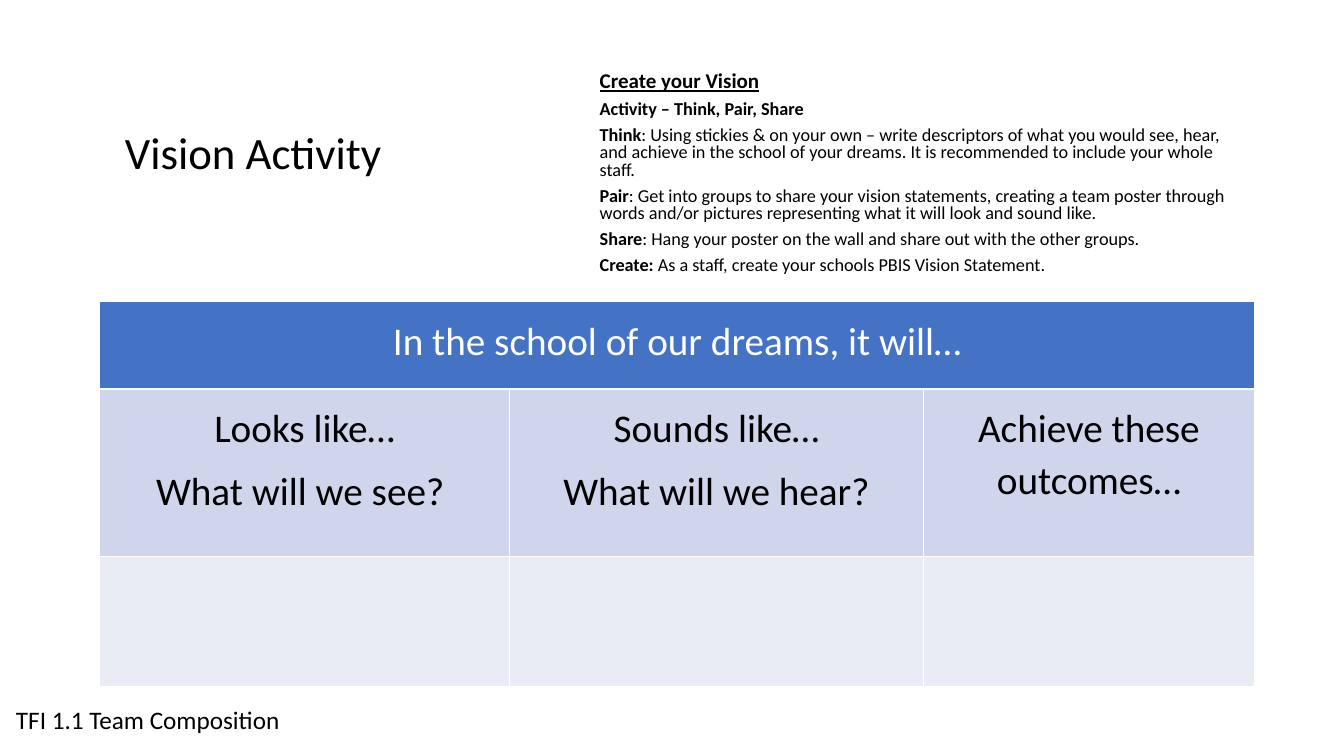
from pptx import Presentation
from pptx.dml.color import RGBColor
from pptx.enum.text import MSO_ANCHOR as Anchor, PP_ALIGN as Align
from pptx.util import Inches, Pt

FONT = "Calibri"
COLORS = {
    "text": "000000",
    "header_text": "FFFFFF",
    "header": "4472C4",
    "prompt": "CFD5EA",
    "answer": "E9EBF5",
}
INSTRUCTIONS = [
    ("Activity – Think, Pair, Share", ""),
    ("Think", ": Using stickies & on your own – write descriptors of what you would see, "
     "hear, and achieve in the school of your dreams. It is recommended to include your "
     "whole staff."),
    ("Pair", ": Get into groups to share your vision statements, creating a team poster "
     "through words and/or pictures representing what it will look and sound like."),
    ("Share", ": Hang your poster on the wall and share out with the other groups."),
    ("Create: ", "As a staff, create your schools PBIS Vision Statement."),
]
TABLE_HEADER = "In the school of our dreams, it will…"
PROMPTS = [
    "Looks like…\nWhat will we see? ",
    "Sounds like…\nWhat will we hear?",
    "Achieve these outcomes…",
]
COLUMN_WIDTHS = [4.06, 4.11, 3.28]
ROW_HEIGHTS = [0.87, 1.66, 1.29]


def format_run(run, size, color="text", bold=False, underline=False):
    font = run.font
    font.name = FONT
    font.size = Pt(size)
    font.bold = bold
    font.underline = underline
    font.color.rgb = RGBColor.from_string(COLORS[color])


def add_text_frame(slide, box, anchor=Anchor.MIDDLE):
    shape = slide.shapes.add_textbox(*map(Inches, box))
    text_frame = shape.text_frame
    text_frame.word_wrap = True
    text_frame.vertical_anchor = anchor
    return text_frame


def add_label(slide, box, text, size, anchor, line_spacing):
    text_frame = add_text_frame(slide, box, anchor)
    text_frame.text = text
    paragraph = text_frame.paragraphs[0]
    paragraph.line_spacing = line_spacing
    format_run(paragraph.runs[0], size)


def add_instructions(slide, box):
    text_frame = add_text_frame(slide, box)
    text_frame.text = "Create your Vision"
    format_run(text_frame.paragraphs[0].runs[0], 15, bold=True, underline=True)
    for lead, detail in INSTRUCTIONS:
        paragraph = text_frame.add_paragraph()
        for text, bold in ((lead, True), (detail, False)):
            if text:
                run = paragraph.add_run()
                run.text = text
                format_run(run, 13, bold=bold)
    for paragraph in text_frame.paragraphs:
        paragraph.line_spacing = 0.8
        paragraph.space_after = Pt(6)


def fill_cell(cell, text, fill, color):
    cell.fill.solid()
    cell.fill.fore_color.rgb = RGBColor.from_string(COLORS[fill])
    if not text:
        return
    cell.margin_left = cell.margin_right = Inches(0.25)
    cell.margin_top = cell.margin_bottom = Inches(0.13)
    cell.text_frame.text = text
    for paragraph in cell.text_frame.paragraphs:
        paragraph.alignment = Align.CENTER
        paragraph.line_spacing = 1.07
        paragraph.space_after = Pt(8)
        format_run(paragraph.runs[0], 28, color)


def add_vision_table(slide, left, top):
    box = (left, top, sum(COLUMN_WIDTHS), sum(ROW_HEIGHTS))
    table = slide.shapes.add_table(
        len(ROW_HEIGHTS), len(COLUMN_WIDTHS), *map(Inches, box)).table
    for column, width in zip(table.columns, COLUMN_WIDTHS):
        column.width = Inches(width)
    for row, height in zip(table.rows, ROW_HEIGHTS):
        row.height = Inches(height)
    table.cell(0, 0).merge(table.cell(0, len(COLUMN_WIDTHS) - 1))
    fill_cell(table.cell(0, 0), TABLE_HEADER, "header", "header_text")
    for index, prompt in enumerate(PROMPTS):
        fill_cell(table.cell(1, index), prompt, "prompt", "text")
        fill_cell(table.cell(2, index), "", "answer", "text")


def build_vision_slide(presentation):
    slide = presentation.slides.add_slide(presentation.slide_layouts[6])
    add_label(slide, (1.14, 0.64, 3.89, 1.8), "Vision Activity", 32, Anchor.MIDDLE, 0.9)
    add_instructions(slide, (5.85, 0.64, 6.56, 2.17))
    add_vision_table(slide, 0.99, 2.99)
    add_label(slide, (0.06, 6.94, 2.84, 0.4), "TFI 1.1 Team Composition", 18, Anchor.TOP, 1.0)


def main():
    presentation = Presentation()
    presentation.slide_width = Inches(13.33)
    presentation.slide_height = Inches(7.5)
    build_vision_slide(presentation)
    presentation.save("out.pptx")


if __name__ == "__main__":
    main()
